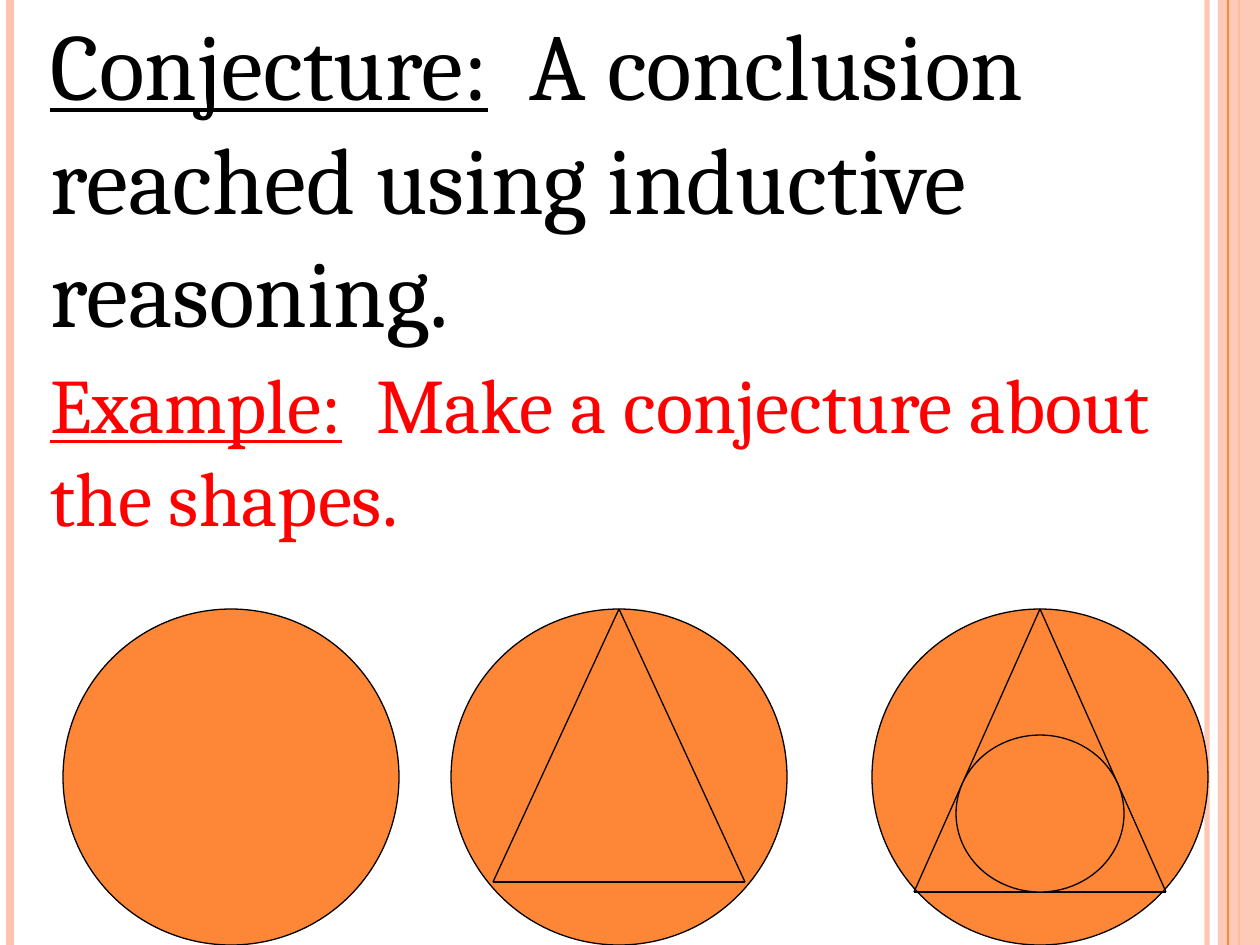
"""Builds a slide that defines a conjecture and shows three nested-shape figures."""
from lxml import etree
from pptx import Presentation
from pptx.dml.color import RGBColor
from pptx.enum.shapes import MSO_CONNECTOR, MSO_SHAPE
from pptx.enum.text import MSO_ANCHOR
from pptx.oxml.ns import qn
from pptx.util import Pt

STRAIGHT = MSO_CONNECTOR.STRAIGHT
OVAL = MSO_SHAPE.OVAL
RECTANGLE = MSO_SHAPE.RECTANGLE
TOP = MSO_ANCHOR.TOP
PX = 914400 / 126
WIDTH, HEIGHT = 1260, 945
ORANGE, PEACH, BLACK, RED = "FE8637", "FEC3AE", "000000", "FF0000"

presentation = Presentation()
presentation.slide_width = round(WIDTH * PX)
presentation.slide_height = round(HEIGHT * PX)
slide = presentation.slides.add_slide(presentation.slide_layouts[6])


def add_line(start, end, color, points, opacity=100):
    line = slide.shapes.add_connector(STRAIGHT, *(round(value * PX) for value in (*start, *end)))
    line.line.color.rgb = RGBColor.from_string(color)
    line.line.width = Pt(points)
    properties = line.element.spPr
    etree.SubElement(properties, qn("a:effectLst"))
    if opacity < 100:
        color_element = properties.find(".//" + qn("a:srgbClr"))
        etree.SubElement(color_element, qn("a:alpha"), val=str(opacity * 1000))


def add_filled(kind, left, top, width, height, color, outline=None, opacity=100):
    shape = slide.shapes.add_shape(kind, *(round(value * PX) for value in (left, top, width, height)))
    shape.shadow.inherit = False
    shape.fill.solid()
    shape.fill.fore_color.rgb = RGBColor.from_string(color)
    if outline:
        shape.line.color.rgb = RGBColor.from_string(outline)
        shape.line.width = Pt(0.75)
    else:
        shape.line.fill.background()
    if opacity < 100:
        color_element = shape.element.spPr.find(".//" + qn("a:srgbClr"))
        etree.SubElement(color_element, qn("a:alpha"), val=str(opacity * 1000))


add_line((1207, 0), (1207, HEIGHT), PEACH, 3, 93)
add_line((10, 0), (10, HEIGHT), PEACH, 4.5)
add_line((1239, 0), (1239, HEIGHT), ORANGE, 1.5)
add_filled(RECTANGLE, 1218, 0, 42, HEIGHT, PEACH, opacity=87)
add_line((1228, 0), (1228, HEIGHT), ORANGE, 0.75)

text_box = slide.shapes.add_textbox(0, 0, round(1176 * PX), round(872 * PX))
text_frame = text_box.text_frame
text_frame.word_wrap = True
text_frame.vertical_anchor = TOP
statements = [
    ("Conjecture:", "  A conclusion reached using inductive reasoning.", 54, BLACK),
    ("Example:", "  Make a conjecture about the shapes.", 44, RED),
]
for index, (term, explanation, size, color) in enumerate(statements):
    paragraph = text_frame.add_paragraph() if index else text_frame.paragraphs[0]
    paragraph.space_before = Pt(6)
    paragraph_properties = paragraph._p.get_or_add_pPr()
    paragraph_properties.set("marL", str(round(38 * PX)))
    paragraph_properties.set("indent", "0")
    for words, underlined in ((term, True), (explanation, False)):
        run = paragraph.add_run()
        run.text = words
        run.font.name = "Cambria"
        run.font.size = Pt(size)
        run.font.underline = underlined
        run.font.color.rgb = RGBColor.from_string(color)

DIAMETER, CIRCLE_TOP, HALF_BASE = 336, 609, 126
for left, base in ((63, None), (451, 882), (872, 892)):
    add_filled(OVAL, left, CIRCLE_TOP, DIAMETER, DIAMETER, ORANGE, BLACK)
    if base:
        center = left + DIAMETER // 2
        corners = [(center, CIRCLE_TOP), (center - HALF_BASE, base), (center + HALF_BASE, base)]
        for start, end in zip(corners, corners[1:] + corners[:1]):
            add_line(start, end, BLACK, 0.75)
add_filled(OVAL, 956, 735, 168, 157, ORANGE, BLACK)

presentation.save("out.pptx")
